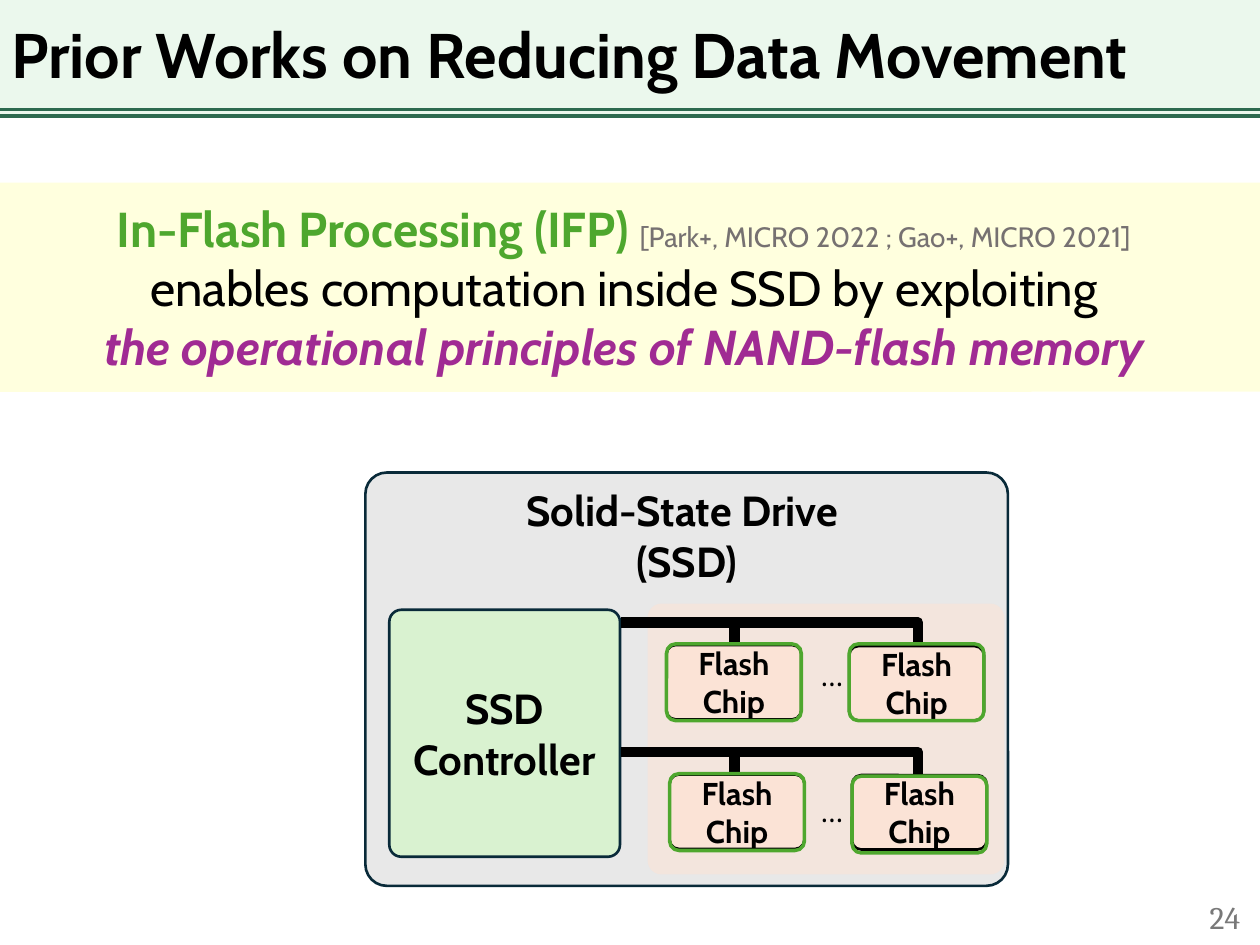
from lxml import etree
from pptx import Presentation
from pptx.dml.color import RGBColor
from pptx.enum import shapes, text
from pptx.oxml.ns import qn
from pptx.util import Pt

BLACK = RGBColor(0, 0, 0)
GREY = RGBColor(0x79, 0x79, 0x79)
CITE = RGBColor(0x76, 0x71, 0x71)
MINT = RGBColor(0xD8, 0xF3, 0xDD)
FOREST = RGBColor(0x2D, 0x6A, 0x4F)
NAVY = RGBColor(0x09, 0x2A, 0x39)
SILVER = RGBColor(0xE8, 0xE8, 0xE8)
PEACH = RGBColor(0xFB, 0xE3, 0xD6)
LIME = RGBColor(0xD9, 0xF2, 0xD0)
GREEN = RGBColor(0x4E, 0xA7, 0x2E)
PURPLE = RGBColor(0xA0, 0x2B, 0x93)
YELLOW = RGBColor(0xFF, 0xFF, 0)
LEFT, CENTER, RIGHT = text.PP_ALIGN.LEFT, text.PP_ALIGN.CENTER, text.PP_ALIGN.RIGHT
TOP, MIDDLE = text.MSO_ANCHOR.TOP, text.MSO_ANCHOR.MIDDLE

prs = Presentation()
prs.slide_width, prs.slide_height = Pt(720), Pt(540)
s = prs.slides.add_slide(prs.slide_layouts[6])


def add_box(x, y, w, h, fill=None, line=None, width=1.5, adj=None, alpha=None):
    """Rectangle, rounded when adj is given; alpha is opacity in percent."""
    kind = shapes.MSO_SHAPE.RECTANGLE if adj is None else shapes.MSO_SHAPE.ROUNDED_RECTANGLE
    sp = s.shapes.add_shape(kind, Pt(x), Pt(y), Pt(w), Pt(h))
    sp.shadow.inherit = False
    if adj is not None:
        sp.adjustments[0] = adj
    if fill is None:
        sp.fill.background()
    else:
        sp.fill.solid()
        sp.fill.fore_color.rgb = fill
    if alpha is not None:
        clr = sp._element.spPr.find(".//" + qn("a:srgbClr"))
        etree.SubElement(clr, qn("a:alpha")).set("val", str(alpha * 1000))
    if line is None:
        sp.line.fill.background()
    else:
        sp.line.color.rgb = line
        sp.line.width = Pt(width)
    return sp


def write(sp, paragraphs, align=CENTER, anchor=MIDDLE):
    """Each paragraph is a list of (text, size, font, colour, bold, italic)."""
    tf = sp.text_frame
    tf.word_wrap = True
    tf.vertical_anchor = anchor
    for i, runs in enumerate(paragraphs):
        p = tf.paragraphs[0] if i == 0 else tf.add_paragraph()
        p.alignment = align
        for words, size, font, color, bold, italic in runs:
            r = p.add_run()
            r.text = words
            r.font.size, r.font.name = Pt(size), font
            r.font.color.rgb = color
            r.font.bold, r.font.italic = bold, italic
    return tf


# Title band with double rule
add_box(0, 0, 720, 66.2, MINT, alpha=50)
for y in (66.2, 62.6):
    c = s.shapes.add_connector(shapes.MSO_CONNECTOR.STRAIGHT, 0, Pt(y), Pt(720), Pt(y))
    c.line.color.rgb = FOREST
    c.line.width = Pt(2)
    etree.SubElement(c._element.spPr, qn("a:effectLst"))

# Slide number and title
sp = s.shapes.add_textbox(Pt(553.7), Pt(509.8), Pt(162), Pt(28.8))
write(sp, [[("24", 18, "Cambria", GREY, False, False)]], RIGHT)
sp = s.shapes.add_textbox(Pt(-0.7), Pt(0), Pt(726.5), Pt(66.2))
title = "Prior Works on Reducing Data Movement"
tf = write(sp, [[(title, 36, "Cabin", BLACK, True, False)]], LEFT)
tf.paragraphs[0].line_spacing = 0.9

# Drive, flash area and controller
drive = add_box(208.8, 270, 367.2, 236.2, SILVER, NAVY, adj=0.052)
write(drive, [[(t, 24, "Cabin", BLACK, True, False)]
              for t in ("Solid-State Drive ", "(SSD)")], anchor=TOP)
add_box(370.1, 344.9, 203.8, 154.8, PEACH, adj=0.052, alpha=59)
controller = add_box(222.5, 348.5, 131.8, 141.1, LIME, NAVY, adj=0.052)
write(controller, [[(t, 24, "Cabin", BLACK, True, False)] for t in ("SSD", "Controller")])

# Flash chips: left, top, and top of the green outline
chips = [(380.9, 368.6, 367.9), (485.3, 369.2, 367.9),
         (382.7, 442.6, 442.1), (486.9, 442.9, 443.5)]
for x, y, _ in chips:
    chip = add_box(x, y, 77, 42.5, PEACH, BLACK, adj=0.122)
    tf = write(chip, [[(t, 18, "Cabin", BLACK, True, False)] for t in ("Flash", "Chip")])
    tf.margin_left = tf.margin_right = 0

# Channels: a bus from the controller that bends down to each chip
for y in (355.7, 429.8):
    for x1, x2 in ((365, 524.5), (355, 419.8)):
        c = s.shapes.add_connector(shapes.MSO_CONNECTOR.ELBOW,
                                   Pt(x1), Pt(y), Pt(x2), Pt(y + 13))
        c._element.spPr.find(qn("a:prstGeom")).set("prst", "bentConnector2")
        c.line.color.rgb = BLACK
        c.line.width = Pt(6)
        etree.SubElement(c._element.spPr, qn("a:effectLst"))

# Ellipses between the chips
for y in (370.8, 448.6):
    sp = s.shapes.add_textbox(Pt(453.6), Pt(y), Pt(42.5), Pt(27.4))
    write(sp, [[("…", 18, "Cambria", BLACK, False, False)]], anchor=TOP)

# Key statement
banner = add_box(-10, 104.4, 739.4, 119.5, YELLOW, adj=0.056, alpha=13)
write(banner, [
    [("In-Flash Processing (IFP) ", 28, "Cabin", GREEN, True, False),
     ("[Park+, MICRO 2022 ; Gao+, MICRO 2021]", 16, "Cabin", CITE, False, False),
     (" ", 28, "Cabin", CITE, False, False)],
    [("enables computation inside SSD by exploiting ", 28, "Cabin", BLACK, False, False)],
    [("the operational principles of NAND-flash memory ", 28, "Cabin", PURPLE, True, True)],
])

# Green outlines around the chips
for x, _, y in chips:
    add_box(x, y, 77, 43.9, line=GREEN, width=2, adj=0.122)

prs.save("out.pptx")
